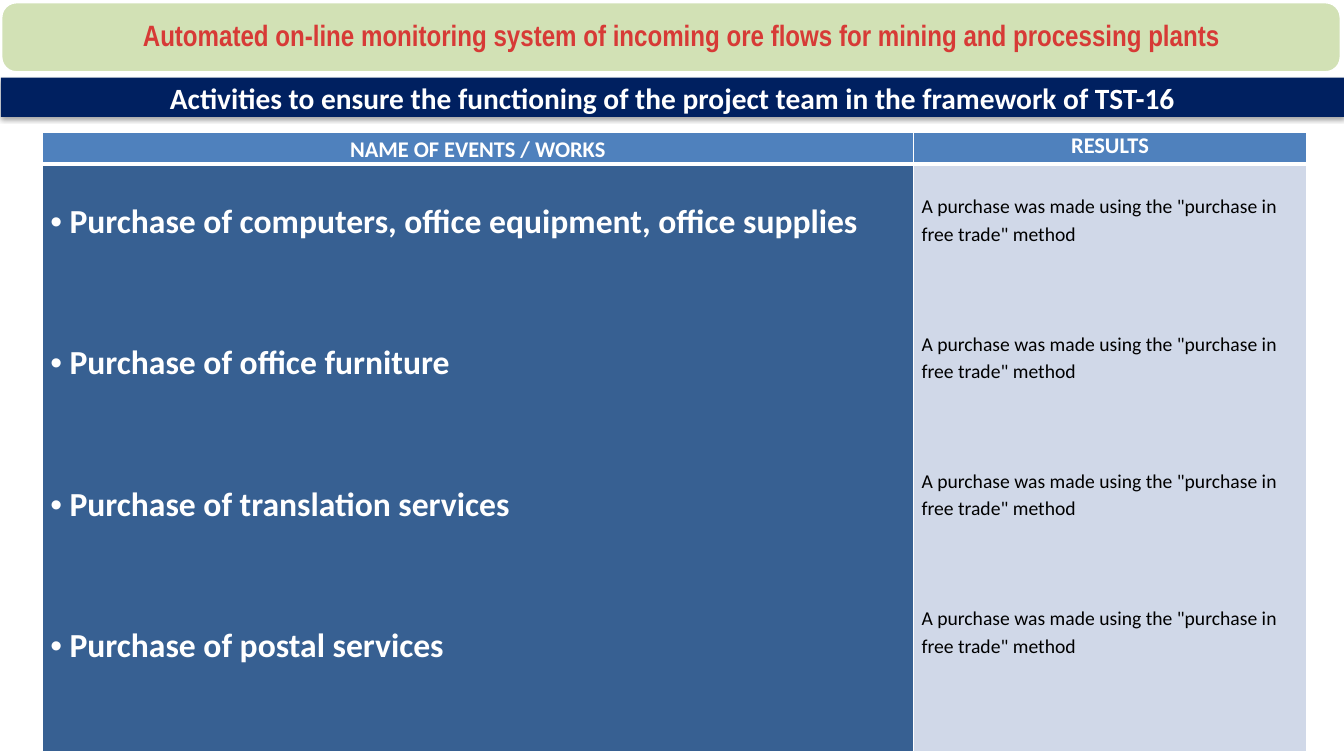
from dataclasses import dataclass

from lxml.etree import SubElement
from pptx import Presentation
from pptx.dml.color import RGBColor
from pptx.enum.shapes import MSO_SHAPE as Shape
from pptx.enum.text import MSO_ANCHOR as Anchor, MSO_AUTO_SIZE as AutoSize, PP_ALIGN as Align
from pptx.oxml import parse_xml
from pptx.oxml.ns import nsdecls, qn
from pptx.util import Inches, Pt


@dataclass(frozen=True)
class Theme:
    body_font: str = "Calibri"
    title_font: str = "Arial Narrow"
    white: str = "FFFFFF"
    black: str = "000000"
    red: str = "D73A36"
    green: str = "D2E1B5"
    navy: str = "002060"
    header: str = "4F81BD"
    events: str = "376092"
    results: str = "D0D8E8"
    heading_size: float = 21
    header_size: float = 16
    event_size: float = 24
    result_size: float = 14


def write(frame, texts, *, size, color, font, bold=False, align=Align.LEFT,
          line=None, gap=0, bullet=None, indent=0.19):
    """Write one paragraph per text, with gap points between paragraphs."""
    for index, text in enumerate(texts):
        para = frame.paragraphs[0] if index == 0 else frame.add_paragraph()
        para.alignment = align
        para.space_before = Pt(gap if index else 0)
        para.space_after = Pt(0)
        if line:
            para.line_spacing = line
        if bullet:
            properties = para._p.get_or_add_pPr()
            properties.set("marL", str(Inches(indent)))
            properties.set("indent", str(-Inches(indent)))
            SubElement(properties, qn("a:buFont")).set("typeface", "Arial")
            SubElement(properties, qn("a:buChar")).set("char", bullet)
        span = para.add_run()
        span.text = text
        span.font.name = font
        span.font.size = Pt(size)
        span.font.bold = bold
        span.font.color.rgb = RGBColor.from_string(color)


class Page:
    def __init__(self, deck, theme):
        self.theme = theme
        self.slide = deck.slides.add_slide(deck.slide_layouts[5])

    def panel(self, kind, left, top, width, height, fill, line=None, shadow=False):
        box = self.slide.shapes.add_shape(
            kind, Inches(left), Inches(top), Inches(width), Inches(height))
        box.shadow.inherit = False
        box.fill.solid()
        box.fill.fore_color.rgb = RGBColor.from_string(fill)
        if line:
            box.line.color.rgb = RGBColor.from_string(line)
            box.line.width = Pt(2)
        else:
            box.line.fill.background()
        if shadow:
            effects = box._element.spPr.find(qn("a:effectLst"))
            effects.append(parse_xml(
                f'<a:outerShdw {nsdecls("a")} blurRad="{Pt(3.1)}" dist="{Pt(1.8)}" '
                f'dir="5400000" rotWithShape="0"><a:srgbClr val="{self.theme.black}">'
                '<a:alpha val="35000"/></a:srgbClr></a:outerShdw>'))
        return box

    def title(self, text, left, top, width, height):
        box = self.slide.shapes.title
        box.left, box.top = Inches(left), Inches(top)
        box.width, box.height = Inches(width), Inches(height)
        frame = box.text_frame
        frame.auto_size = AutoSize.NONE
        frame.word_wrap = True
        frame.vertical_anchor = Anchor.MIDDLE
        frame.margin_left = Inches(0.33)
        frame.margin_top = frame.margin_right = frame.margin_bottom = Inches(0.12)
        write(frame, [text], size=self.theme.heading_size, color=self.theme.red,
              font=self.theme.title_font, bold=True, align=Align.CENTER, line=0.9)
        # Bring the title in front of its panel
        self.slide.shapes._spTree.append(box._element)

    def bar(self, text, left, top, width, height):
        box = self.panel(Shape.RECTANGLE, left, top, width, height,
                         self.theme.navy, shadow=True)
        frame = box.text_frame
        frame.word_wrap = True
        frame.vertical_anchor = Anchor.MIDDLE
        frame.margin_left = frame.margin_right = Inches(0.12)
        frame.margin_top = frame.margin_bottom = Inches(0.06)
        write(frame, [text], size=self.theme.heading_size, color=self.theme.white,
              font=self.theme.body_font, bold=True, align=Align.CENTER)

    def table(self, left, top, columns, rows):
        table = self.slide.shapes.add_table(
            len(rows), len(columns), Inches(left), Inches(top),
            Inches(sum(columns)), Inches(sum(rows))).table
        for column, width in zip(table.columns, columns):
            column.width = Inches(width)
        for row, height in zip(table.rows, rows):
            row.height = Inches(height)
        return table

    def cell(self, cell, texts, fill, top=0, borders=(1, 1, 1, 1), **text_format):
        cell.margin_left = cell.margin_right = Inches(0.08)
        cell.margin_top, cell.margin_bottom = Inches(top), 0
        cell.vertical_anchor = Anchor.TOP
        cell.fill.solid()
        cell.fill.fore_color.rgb = RGBColor.from_string(fill)
        properties = cell._tc.get_or_add_tcPr()
        for index, (side, weight) in enumerate(zip("LRTB", borders)):
            properties.insert(index, parse_xml(
                f'<a:ln{side} {nsdecls("a")} w="{Pt(weight)}"><a:solidFill>'
                f'<a:srgbClr val="{self.theme.white}"/></a:solidFill></a:ln{side}>'))
        write(cell.text_frame, texts, font=self.theme.body_font, **text_format)


def main():
    theme = Theme()
    deck = Presentation()
    deck.slide_width, deck.slide_height = Inches(13.33), Inches(7.5)
    page = Page(deck, theme)

    # Heading panel and subject bar
    banner = (0.01, 0.02, 13.29, 0.7)
    page.bar("Activities to ensure the functioning of the project team "
             "in the framework of TST-16", 0.01, 0.77, 13.32, 0.39)
    panel = page.panel(Shape.ROUNDED_RECTANGLE, *banner, theme.green, line=theme.white)
    panel.adjustments[0] = 0.22
    page.title("Automated on-line monitoring system of incoming ore flows "
               "for mining and processing plants", *banner)

    # Table header
    table = page.table(0.42, 1.31, [8.64, 3.9], [0.32, 5.83])
    headers = [("NAME OF EVENTS / WORKS", 1.15), ("RESULTS", None)]
    for column, (label, line) in enumerate(headers):
        page.cell(table.cell(0, column), [label], theme.header, borders=(1, 1, 1, 3),
                  size=theme.header_size, color=theme.white, bold=True,
                  align=Align.CENTER, line=line)

    # Events and their results
    events = ["Purchase of computers, office equipment, office supplies",
              "Purchase of office furniture",
              "Purchase of translation services",
              "Purchase of postal services"]
    result = 'A purchase was made using the "purchase in free trade" method'
    page.cell(table.cell(1, 0), events, theme.events, top=0.31, borders=(1, 1, 3, 1),
              size=theme.event_size, color=theme.white, bold=True,
              line=1.15, gap=67.3, bullet="•")
    page.cell(table.cell(1, 1), [result] * len(events), theme.results, top=0.27,
              borders=(1, 1, 3, 1), size=theme.result_size, color=theme.black,
              line=1.15, gap=59)

    deck.save("out.pptx")


if __name__ == "__main__":
    main()
